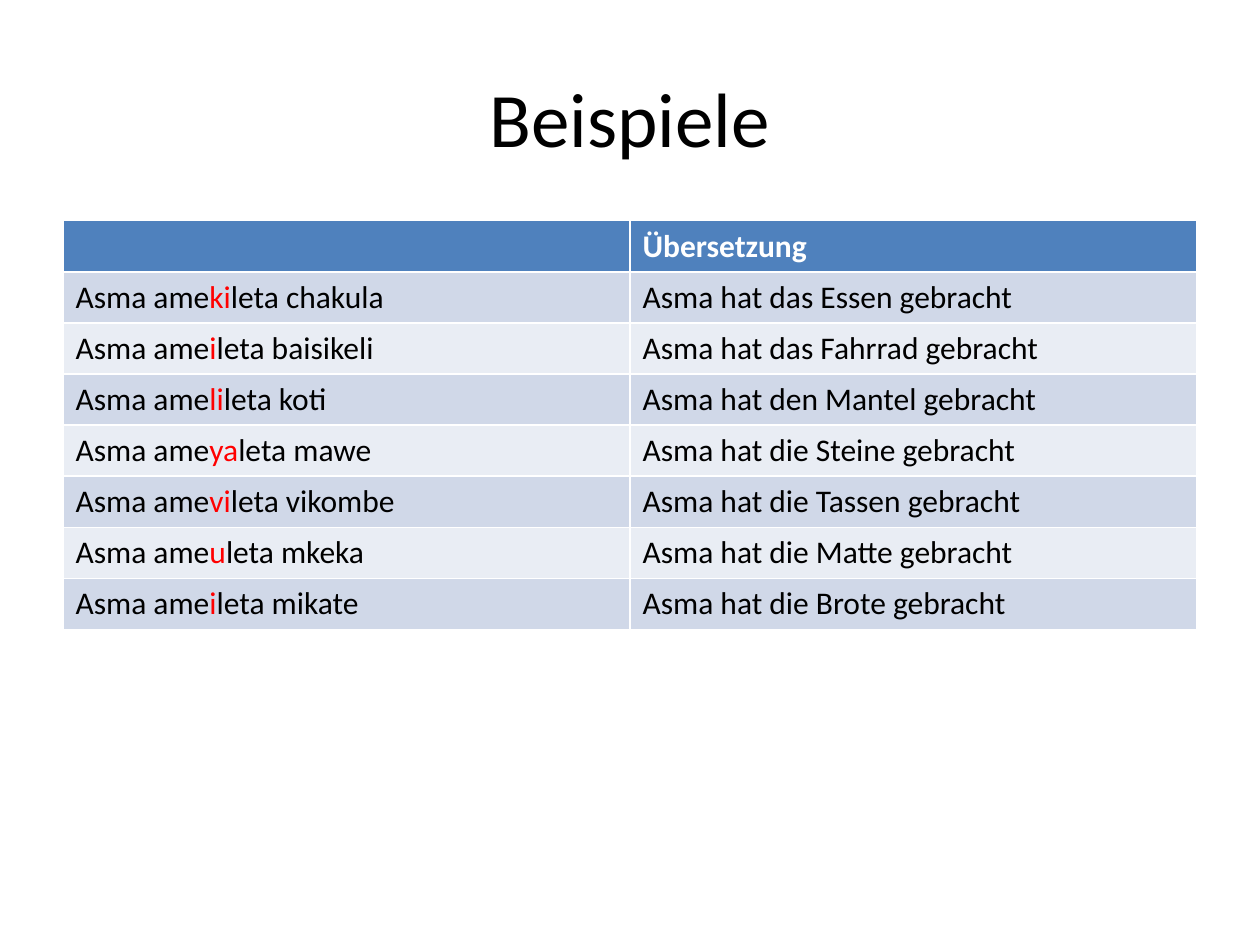
"""Build a slide with a table of Swahili example sentences and German translations."""
import dataclasses
import typing

import pptx
import pptx.dml.color
import pptx.enum.text
import pptx.util

COLORS = {"text": "000000", "marker": "FF0000", "header_text": "FFFFFF",
          "header": "4F81BD", "odd": "D0D8E8", "even": "E9EDF4"}
MARGIN, WIDTH = pptx.util.Cm(1.27), pptx.util.Cm(22.86)
ROW_HEIGHT = pptx.util.Cm(1.03)


@dataclasses.dataclass
class Example:
    marker: str
    noun: str
    translation: str


EXAMPLES = [
    Example("ki", "chakula", "das Essen"),
    Example("i", "baisikeli", "das Fahrrad"),
    Example("li", "koti", "den Mantel"),
    Example("ya", "mawe", "die Steine"),
    Example("vi", "vikombe", "die Tassen"),
    Example("u", "mkeka", "die Matte"),
    Example("i", "mikate", "die Brote"),
]


def rgb(name: str) -> pptx.dml.color.RGBColor:
    return pptx.dml.color.RGBColor.from_string(COLORS[name])


def add_run(p: typing.Any, text: str, color: str = "text", size: int = 18, bold: bool = False) -> None:
    r = p.add_run()
    r.text = text
    fmt = {"name": "Calibri", "size": pptx.util.Pt(size), "bold": bold}
    for key, value in fmt.items():
        setattr(r.font, key, value)
    r.font.color.rgb = rgb(color)


def add_title(slide: typing.Any, text: str) -> None:
    sp = slide.shapes.title
    box = {"left": MARGIN, "top": pptx.util.Cm(0.76), "width": WIDTH, "height": pptx.util.Cm(3.18)}
    for key, value in box.items():
        setattr(sp, key, value)
    tf = sp.text_frame
    tf.vertical_anchor = pptx.enum.text.MSO_ANCHOR.MIDDLE
    p = tf.paragraphs[0]
    p.alignment = pptx.enum.text.PP_ALIGN.CENTER
    add_run(p, text, size=44)


def fill_row(row: typing.Any, color: str) -> list[typing.Any]:
    row.height = ROW_HEIGHT
    for cell in row.cells:
        cell.fill.solid()
        cell.fill.fore_color.rgb = rgb(color)
    return [cell.text_frame.paragraphs[0] for cell in row.cells]


def add_examples(slide: typing.Any, examples: list[Example]) -> None:
    count = len(examples) + 1
    table = slide.shapes.add_table(count, 2, MARGIN, pptx.util.Cm(4.45), WIDTH, ROW_HEIGHT * count).table
    header = fill_row(table.rows[0], "header")
    add_run(header[1], "Übersetzung", "header_text", bold=True)
    for i, example in enumerate(examples, start=1):
        swahili, german = fill_row(table.rows[i], "odd" if i % 2 else "even")
        add_run(swahili, "Asma ame")
        add_run(swahili, example.marker, "marker")
        add_run(swahili, f"leta {example.noun}")
        add_run(german, f"Asma hat {example.translation} gebracht")


def main() -> None:
    prs = pptx.Presentation()
    prs.slide_width, prs.slide_height = pptx.util.Cm(25.4), pptx.util.Cm(19.05)
    s = prs.slides.add_slide(prs.slide_layouts[5])
    add_title(s, "Beispiele")
    add_examples(s, EXAMPLES)
    prs.save("out.pptx")


if __name__ == "__main__":
    main()
